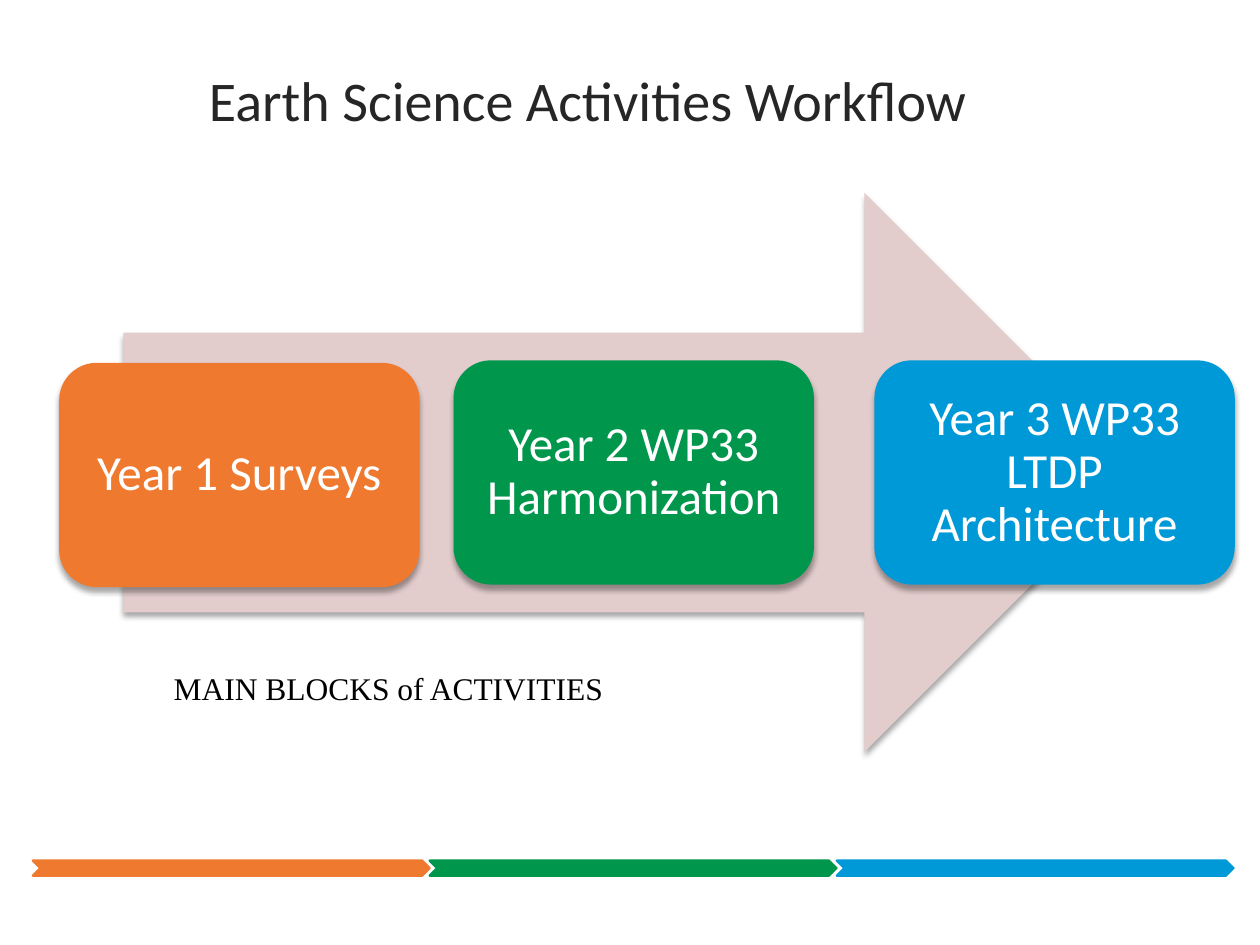
from lxml import etree
from pptx import Presentation
from pptx.dml.color import RGBColor
from pptx.enum.shapes import MSO_SHAPE
from pptx.enum.text import MSO_ANCHOR, PP_ALIGN
from pptx.oxml.ns import qn
from pptx.util import Inches, Pt

CHEVRON = MSO_SHAPE.CHEVRON
ARROW = MSO_SHAPE.RIGHT_ARROW
ROUNDED = MSO_SHAPE.ROUNDED_RECTANGLE
MIDDLE, BOTTOM, TOP = MSO_ANCHOR.MIDDLE, MSO_ANCHOR.BOTTOM, MSO_ANCHOR.TOP
CENTER, LEFT = PP_ALIGN.CENTER, PP_ALIGN.LEFT

THEME = {
    "orange": "EF792F", "green": "00964B", "blue": "0099D8",
    "arrow": "E3CCCC", "title": "262626", "black": "000000", "white": "FFFFFF",
    "sans": "Calibri", "serif": "Times New Roman",
    "title_size": 32, "block_size": 28, "caption_size": 18,
}

TITLE = "Earth Science Activities Workflow"
CAPTION = "MAIN BLOCKS of ACTIVITIES"
# text, colour, left, top
BLOCKS = [
    ("Year 1 Surveys", "orange", 0.47, 2.88),
    ("Year 2 WP33 Harmonization", "green", 3.6, 2.86),
    ("Year 3 WP33 LTDP Architecture", "blue", 6.94, 2.86),
]
BLOCK_W, BLOCK_H, BLOCK_INSET = 2.86, 1.78, 0.12
# colour, width; the segments run end to end
STRIPE = [("orange", 3.15), ("green", 3.23), ("blue", 3.15)]
STRIPE_LEFT, STRIPE_TOP, STRIPE_H = 0.26, 6.83, 0.12


def rgb(name):
    return RGBColor.from_string(THEME[name])


def add_shadow(s):
    """Give the shape a soft shadow falling straight down."""
    effects = s._element.spPr.find(qn("a:effectLst"))
    shadow = etree.SubElement(effects, qn("a:outerShdw"), blurRad=str(Pt(3)),
                              dist=str(Pt(3)), dir="5400000", rotWithShape="0")
    color = etree.SubElement(shadow, qn("a:srgbClr"), val=THEME["black"])
    etree.SubElement(color, qn("a:alpha"), val="35000")


def add_filled(slide, kind, box, color):
    s = slide.shapes.add_shape(kind, *map(Inches, box))
    s.shadow.inherit = False
    s.fill.solid()
    s.fill.fore_color.rgb = rgb(color)
    s.line.fill.background()
    return s


def write(s, text, font, size, color, anchor, align):
    tf = s.text_frame
    tf.word_wrap = True
    tf.vertical_anchor = anchor
    p = tf.paragraphs[0]
    p.text = text
    p.alignment = align
    p.font.name = THEME[font]
    p.font.size = Pt(THEME[size])
    p.font.color.rgb = rgb(color)
    return tf


def add_stripe(slide):
    left = STRIPE_LEFT
    for color, width in STRIPE:
        s = add_filled(slide, CHEVRON, (left, STRIPE_TOP, width, STRIPE_H), color)
        s.line.color.rgb = rgb(color)
        s.line.width = Pt(1.25)
        left += width


def add_block(slide, text, color, left, top):
    s = add_filled(slide, ROUNDED, (left, top, BLOCK_W, BLOCK_H), color)
    add_shadow(s)
    tf = write(s, text, "sans", "block_size", "white", MIDDLE, CENTER)
    tf.margin_left = tf.margin_right = Inches(BLOCK_INSET)
    tf.margin_top = tf.margin_bottom = Inches(BLOCK_INSET)
    tf.paragraphs[0].line_spacing = 0.9


def main():
    prs = Presentation()
    prs.slide_width, prs.slide_height = Inches(10), Inches(7.5)
    slide = prs.slides.add_slide(prs.slide_layouts[6])

    add_stripe(slide)
    title = slide.shapes.add_textbox(*map(Inches, (1.56, 0.22, 6.84, 0.88)))
    write(title, TITLE, "sans", "title_size", "title", BOTTOM, LEFT)
    add_shadow(add_filled(slide, ARROW, (0.98, 1.53, 8.1, 4.44), "arrow"))
    for block in BLOCKS:
        add_block(slide, *block)
    caption = slide.shapes.add_textbox(*map(Inches, (1.28, 5.26, 5.16, 0.4)))
    write(caption, CAPTION, "serif", "caption_size", "black", TOP, LEFT)

    prs.save("out.pptx")


if __name__ == "__main__":
    main()
